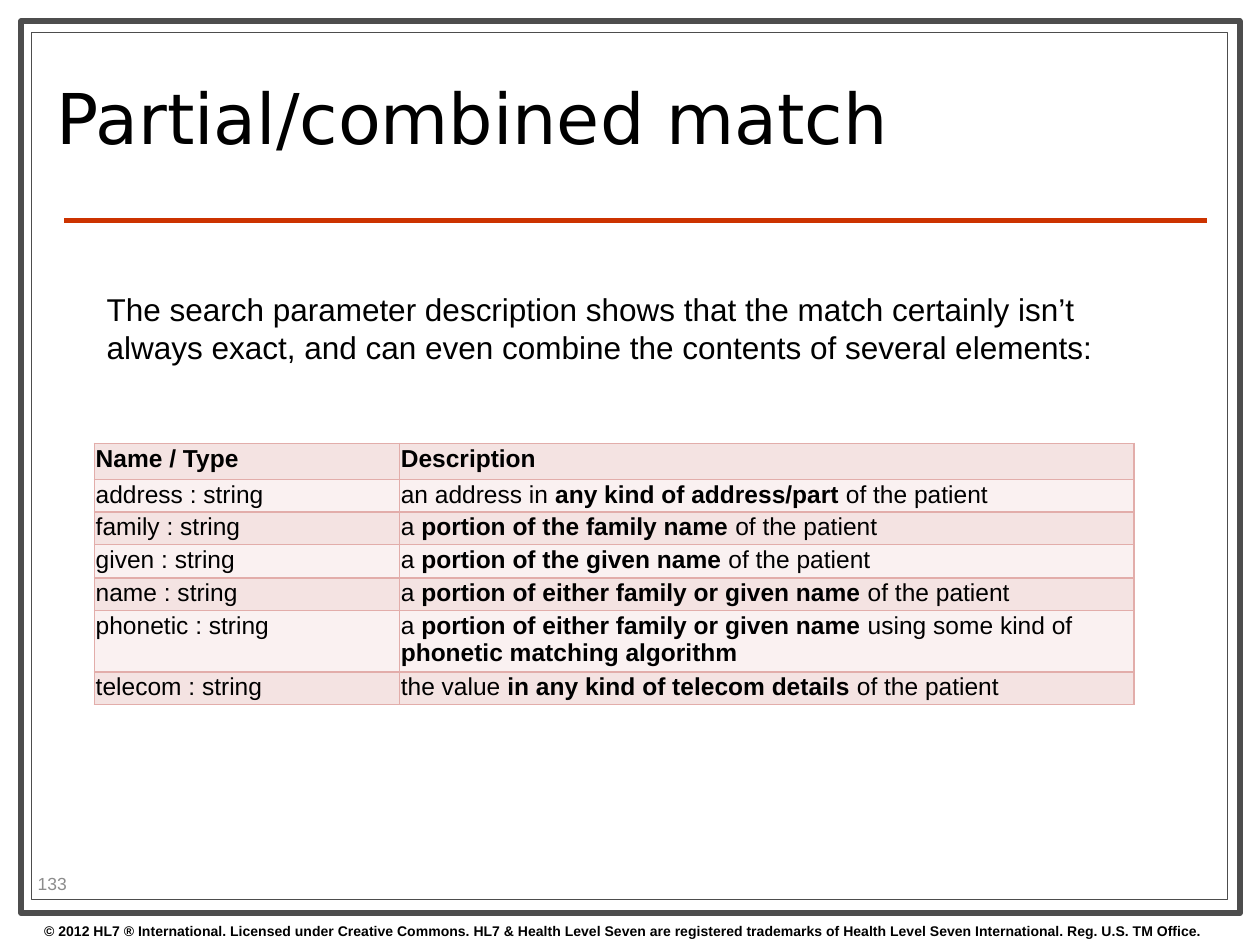
from lxml.etree import SubElement as Sub
from pptx import Presentation
from pptx.dml.color import RGBColor as RGB
from pptx.enum.shapes import MSO_CONNECTOR as Conn, MSO_SHAPE as Kind
from pptx.enum.text import MSO_ANCHOR as Anchor
from pptx.oxml.ns import qn
from pptx.util import Cm, Pt

ROWS = [
    (0.73, "**Name / Type**", "**Description**"),
    (0.62, "address : string",
     "an address in **any kind of address/part** of the patient"),
    (0.61, "family : string",
     "a **portion of the family name** of the patient"),
    (0.67, "given : string",
     "a **portion of the given name** of the patient"),
    (0.62, "name : string",
     "a **portion of either family or given name** of the patient"),
    (1.17, "phonetic : string",
     "a **portion of either family or given name** using some kind of "
     "**phonetic matching algorithm**"),
    (0.61, "telecom : string",
     "the value **in any kind of telecom details** of the patient"),
]


def color(code):
    return RGB.from_string(code)


class Deck:
    font = "Arial"
    ink = "000000"
    gray = "4D4D4D"
    red = "CC3300"
    edge = "E2ADAA"
    bands = ("F4E3E2", "FAF1F1")

    def __init__(self, wide, high):
        self.file = Presentation()
        self.file.slide_width, self.file.slide_height = Cm(wide), Cm(high)
        self.slide = self.file.slides.add_slide(self.file.slide_layouts[6])

    def add_runs(self, para, text, size, font=None, ink=None):
        """Add text run by run; parts between ** marks are bold."""
        for i, part in enumerate(text.split("**")):
            if part:
                run = para.add_run()
                run.text = part
                run.font.name = font or self.font
                run.font.size = Pt(size)
                run.font.bold = i % 2 == 1
                run.font.color.rgb = color(ink or self.ink)

    def frame(self, box, width):
        shape = self.slide.shapes.add_shape(Kind.RECTANGLE, *map(Cm, box))
        shape.shadow.inherit = False
        shape.fill.solid()
        shape.fill.fore_color.rgb = color("FFFFFF")
        shape.line.color.rgb = color(self.gray)
        shape.line.width = Pt(width)

    def rule(self, left, right, y, width):
        line = self.slide.shapes.add_connector(
            Conn.STRAIGHT, Cm(left), Cm(y), Cm(right), Cm(y))
        line.line.color.rgb = color(self.red)
        line.line.width = Pt(width)
        Sub(line._element.spPr, qn("a:effectLst"))

    def text(self, box, text, size, font=None, ink=None,
             anchor=Anchor.TOP, space=None):
        body = self.slide.shapes.add_textbox(*map(Cm, box)).text_frame
        body.word_wrap = True
        body.vertical_anchor = anchor
        para = body.paragraphs[0]
        para.line_spacing = space
        self.add_runs(para, text, size, font, ink)

    def border(self, cell):
        props = cell._tc.get_or_add_tcPr()
        for side in "LRTB":
            line = Sub(props, qn(f"a:ln{side}"), w=str(Pt(1)))
            fill = Sub(line, qn("a:solidFill"))
            Sub(fill, qn("a:srgbClr"), val=self.edge)

    def table(self, left, top, cols, rows, size):
        high = sum(row[0] for row in rows)
        grid = self.slide.shapes.add_table(
            len(rows), len(cols), Cm(left), Cm(top),
            Cm(sum(cols)), Cm(high)).table
        for col, wide in zip(grid.columns, cols):
            col.width = Cm(wide)
        for r, (tall, *texts) in enumerate(rows):
            grid.rows[r].height = Cm(tall)
            for c, text in enumerate(texts):
                cell = grid.cell(r, c)
                cell.margin_left = cell.margin_right = Cm(0.03)
                cell.margin_top = cell.margin_bottom = Cm(0.03)
                self.border(cell)
                cell.fill.solid()
                cell.fill.fore_color.rgb = color(self.bands[r % 2])
                self.add_runs(cell.text_frame.paragraphs[0], text, size)


def main():
    deck = Deck(25.4, 19.05)
    deck.frame((0.43, 0.43, 24.56, 17.98), 3.5)
    deck.frame((0.64, 0.66, 24.1, 17.48), 0.75)
    deck.rule(1.3, 24.33, 4.45, 3)
    deck.text((0.64, 18.47, 25.4, 0.58),
              "**© 2012 HL7 ® International. Licensed under Creative Commons. "
              "HL7 & Health Level Seven are registered trademarks of Health "
              "Level Seven International. Reg. U.S. TM Office.**", 8)
    deck.text((0.89, 0.91, 18.21, 3.2), "Partial/combined match", 40,
              font="DejaVu Sans", anchor=Anchor.MIDDLE, space=0.8)
    deck.text((0.51, 17.5, 2, 0.61), "133", 10, ink="8C8C8C",
              anchor=Anchor.MIDDLE)
    deck.table(1.9, 8.94, (6.15, 14.81), ROWS, 14)
    deck.text((1.9, 5.72, 22.02, 1.8),
              "The search parameter description shows that the match certainly "
              "isn’t always exact, and can even combine the contents of "
              "several elements:", 18)
    deck.file.save("out.pptx")


if __name__ == "__main__":
    main()
